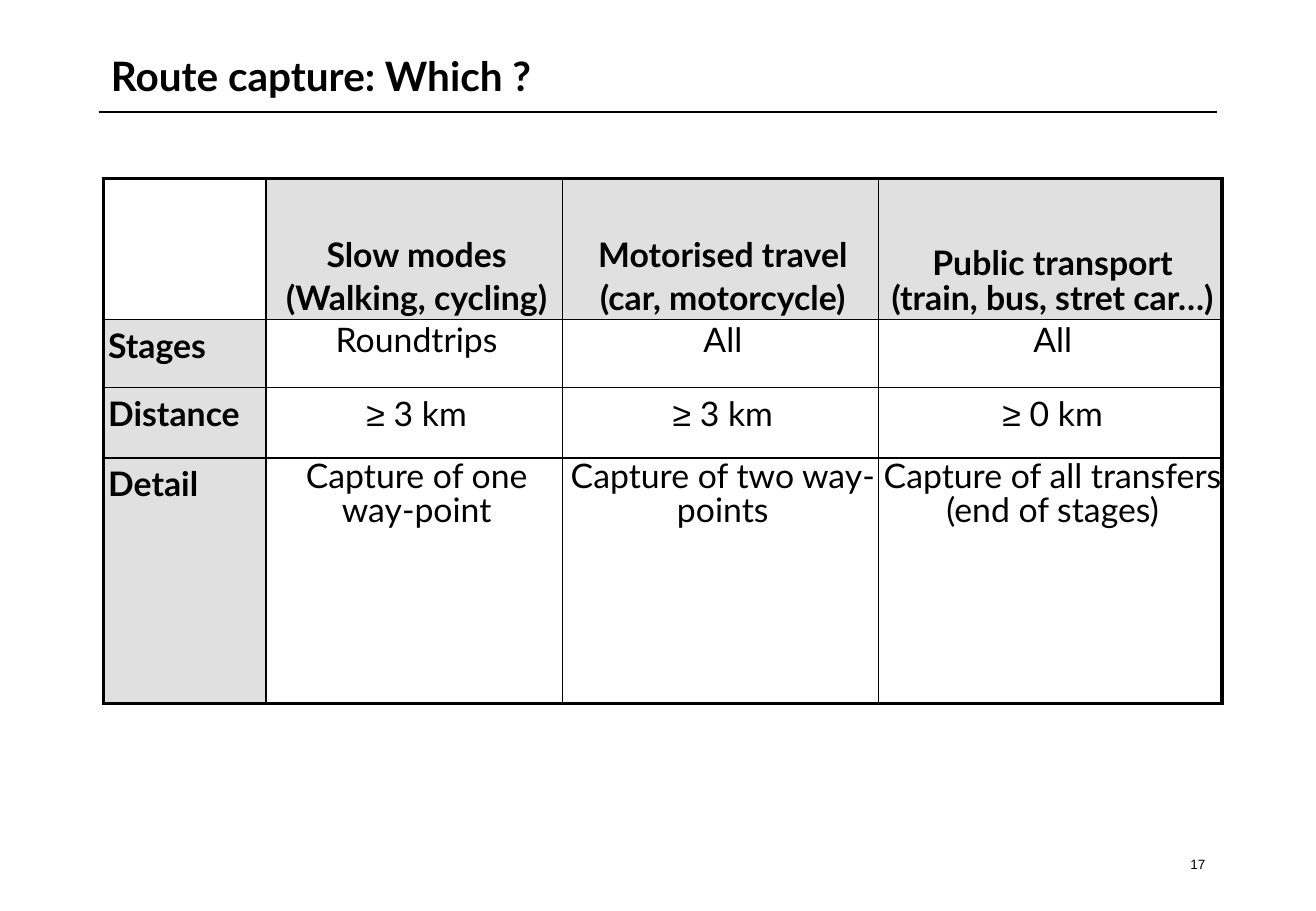
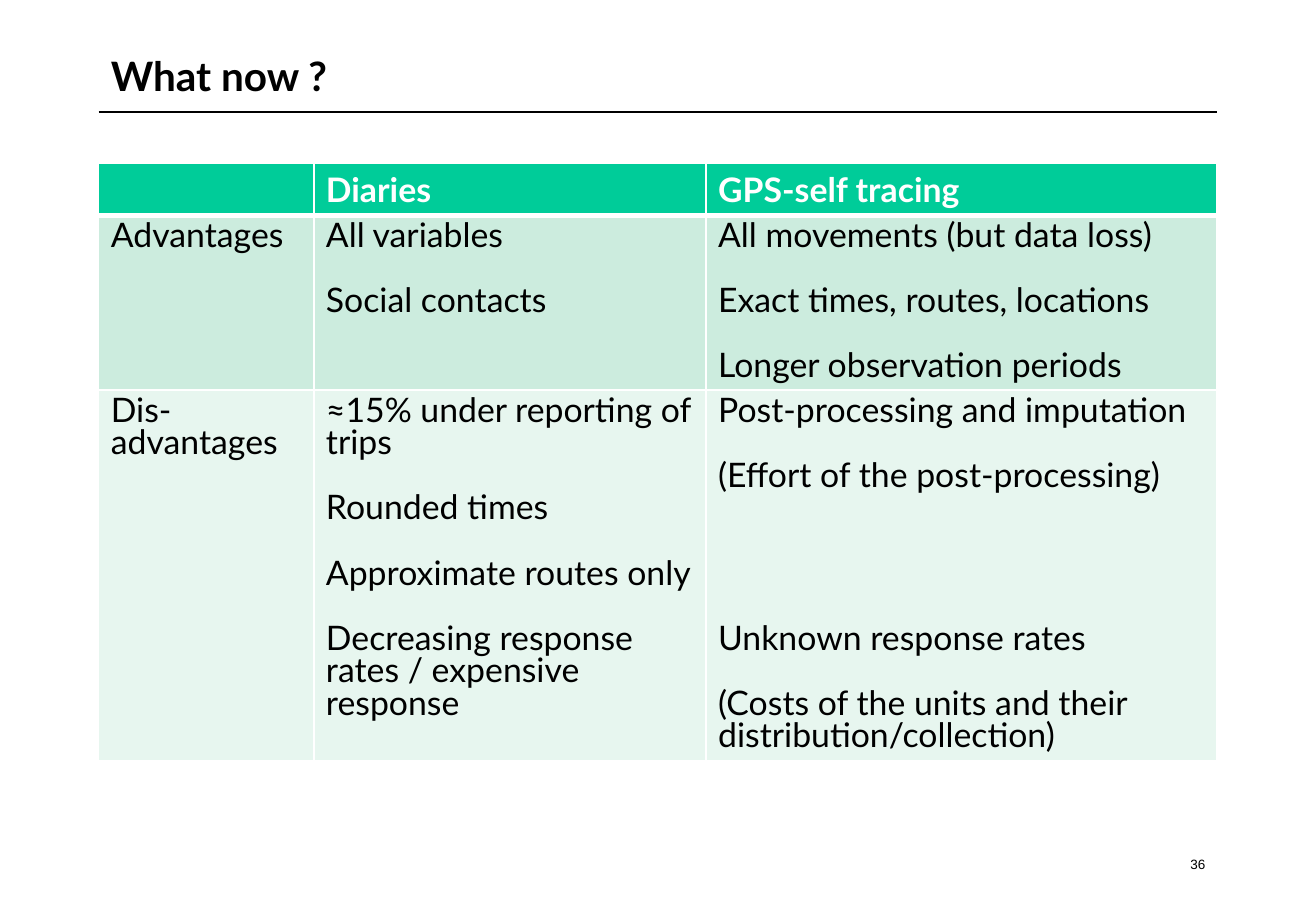
"""Build two table slides on route capture and travel diaries."""
from dataclasses import dataclass
from itertools import groupby

from lxml import etree
from pptx import Presentation
from pptx.dml.color import RGBColor
from pptx.enum.shapes import MSO_CONNECTOR
from pptx.enum.text import MSO_ANCHOR, MSO_AUTO_SIZE, PP_ALIGN
from pptx.oxml.ns import qn
from pptx.util import Inches, Pt

LEFT, MID, RIGHT = PP_ALIGN.LEFT, PP_ALIGN.CENTER, PP_ALIGN.RIGHT
TOP, CORE, BASE = MSO_ANCHOR.TOP, MSO_ANCHOR.MIDDLE, MSO_ANCHOR.BOTTOM
FIXED = MSO_AUTO_SIZE.NONE
STRAIGHT = MSO_CONNECTOR.STRAIGHT
WIDE, HIGH = Inches(10.83), Inches(7.5)
TITLE_ONLY = 5
EDGE, SPAN = 7.5, 85


@dataclass(frozen=True)
class Theme:
    """Hold the colours, fonts and type sizes."""
    ink: str = "000000"
    paper: str = "FFFFFF"
    grey: str = "E0E0E0"
    green: str = "00CC99"
    mint: str = "CCECDE"
    pale: str = "E7F6EF"
    font: str = "Lato"
    plain: str = "Arial"
    title: float = 24
    body: float = 20
    note: float = 8


THEME = Theme()


def across(share):
    """Turn a percentage of the slide width into a length."""
    return round(WIDE * share / 100)


def down(share):
    """Turn a percentage of the slide height into a length."""
    return round(HIGH * share / 100)


def place(x, y, w, h):
    """Turn four percentages into a box."""
    return across(x), down(y), across(w), down(h)


def write(frame, text, size=THEME.body, font=THEME.font, color=THEME.ink,
          bold=False, align=LEFT, line=1.0, gap=0):
    """Write paragraphs split by newlines, with line breaks at vertical tabs."""
    for i, part in enumerate(text.split("\n")):
        para = frame.add_paragraph() if i else frame.paragraphs[0]
        para.alignment, para.line_spacing = align, line
        para.space_before = Pt(gap if i else 0)
        for j, row in enumerate(part.split("\v")):
            if j:
                para.add_line_break()
            for sign, chars in groupby(row, lambda c: c == "≥"):
                run = para.add_run()
                run.text = "".join(chars)
                run.font.name = THEME.plain if sign else font
                run.font.size, run.font.bold = Pt(size), bold
                run.font.color.rgb = RGBColor.from_string(color)


def border(cell, sides, color):
    """Draw the left, right, top and bottom borders of a cell."""
    props = cell._tc.get_or_add_tcPr()
    for side, width in zip("LRTB", sides):
        line = etree.SubElement(props, qn(f"a:ln{side}"), w=str(Pt(width)))
        fill = etree.SubElement(line, qn("a:solidFill"))
        etree.SubElement(fill, qn("a:srgbClr"), val=color)


def grid(slide, spot, cols, rows, data, look, rules, color, pad):
    """Add a table, with a look for each cell and rule widths for each axis."""
    box = place(*spot, sum(cols), sum(rows))
    table = slide.shapes.add_table(len(rows), len(cols), *box).table
    table.first_row = table.horz_banding = False
    for col, share in zip(table.columns, cols):
        col.width = across(share)
    for row, share in zip(table.rows, rows):
        row.height = down(share)
    flat, tall = rules
    for r, line in enumerate(data):
        for c, text in enumerate(line):
            cell = table.cell(r, c)
            fill, anchor, style = look(r, c)
            border(cell, tall[c:c + 2] + flat[r:r + 2], color)
            cell.fill.solid()
            cell.fill.fore_color.rgb = RGBColor.from_string(fill)
            cell.vertical_anchor = anchor
            (cell.margin_left, cell.margin_top,
             cell.margin_right, cell.margin_bottom) = map(Inches, pad)
            if text:
                write(cell.text_frame, text, **style)
    return table


def start(deck, title, page):
    """Add a slide with its title, rule and page number."""
    slide = deck.slides.add_slide(deck.slide_layouts[TITLE_ONLY])
    head = slide.shapes.title
    head.left, head.top, head.width, head.height = place(EDGE, 4.4, SPAN, 7.75)
    head.text_frame.auto_size = FIXED
    head.text_frame.vertical_anchor = CORE
    write(head.text_frame, title, size=THEME.title, bold=True)
    y = down(12.3)
    rule = slide.shapes.add_connector(
        STRAIGHT, across(EDGE), y, across(EDGE + SPAN), y)
    rule.line.color.rgb = RGBColor.from_string(THEME.ink)
    rule.line.width = Pt(0.75)
    etree.SubElement(rule._element.spPr, qn("a:effectLst"))
    note = slide.shapes.add_textbox(*place(71.65, 93.33, 20.85, 4.4))
    note.text_frame.word_wrap = True
    write(note.text_frame, page, size=THEME.note, font=THEME.plain, align=RIGHT)
    return slide


def mode_look(r, c):
    """Give fill, anchor and text format for a travel mode cell."""
    if r == 0:
        style = dict(bold=True, align=MID, line=0.85, gap=5)
        return (THEME.grey if c else THEME.paper), BASE, style
    if c == 0:
        return THEME.grey, TOP, dict(bold=True, line=Pt(26))
    line = (0.95, Pt(26), 0.85)[r - 1]
    return THEME.paper, TOP, dict(align=MID, line=line)


def plan_look(r, c):
    """Give fill, anchor and text format for a method cell."""
    fill = (THEME.green, THEME.mint, THEME.pale)[r]
    if r == 0:
        return fill, TOP, dict(bold=True, color=THEME.paper)
    return fill, TOP, dict(line=0.8, gap=19.3)


def modes(deck):
    """Build the slide on which routes to capture."""
    data = [
        ["", "Slow modes\n(Walking, cycling)",
         "Motorised travel\n(car, motorcycle)",
         "Public transport\v(train, bus, stret car…)"],
        ["Stages", "Roundtrips", "All", "All"],
        ["Distance", "≥ 3 km", "≥ 3 km", "≥ 0 km"],
        ["Detail", "Capture of one way-point", "Capture of two way-points",
         "Capture of all transfers (end of stages)"],
    ]
    rules = [2.25, 1, 1, 1, 2.25]
    grid(start(deck, "Route capture: Which ?", "17"), (7.85, 19.6),
         [12.37, 22.53, 24, 26.13], [15.47, 7.47, 7.73, 26.93],
         data, mode_look, (rules, rules), THEME.ink, (0.04, 0.02, 0, 0.02))


def plans(deck):
    """Build the slide that compares diaries with tracing."""
    data = [
        ["", "Diaries", "GPS-self tracing"],
        ["Advantages", "All variables\nSocial contacts",
         "All movements (but data loss)\nExact times, routes, locations\n"
         "Longer observation periods"],
        ["Dis-advantages",
         "≈15% under reporting of trips\nRounded times\n"
         "Approximate routes only\n"
         "Decreasing response rates / expensive response",
         "Post-processing and imputation\n(Effort of the post-processing)\n"
         "Unknown response rates\n"
         "(Costs of the units and their distribution/collection)"],
    ]
    table = grid(start(deck, "What now ?", "36"), (EDGE, 17.87),
                 [16.35, 29.8, 38.85], [5.73, 19.07, 40.67], data, plan_look,
                 ([1, 3, 1, 1], [1] * 4), THEME.paper, (0.1, 0.05, 0.1, 0.05))
    rates = table.cell(2, 2).text_frame.paragraphs[2]
    rates.space_before = Pt(77.2)


def main():
    """Build and save the deck."""
    deck = Presentation()
    deck.slide_width, deck.slide_height = WIDE, HIGH
    modes(deck)
    plans(deck)
    deck.save("out.pptx")


if __name__ == "__main__":
    main()
